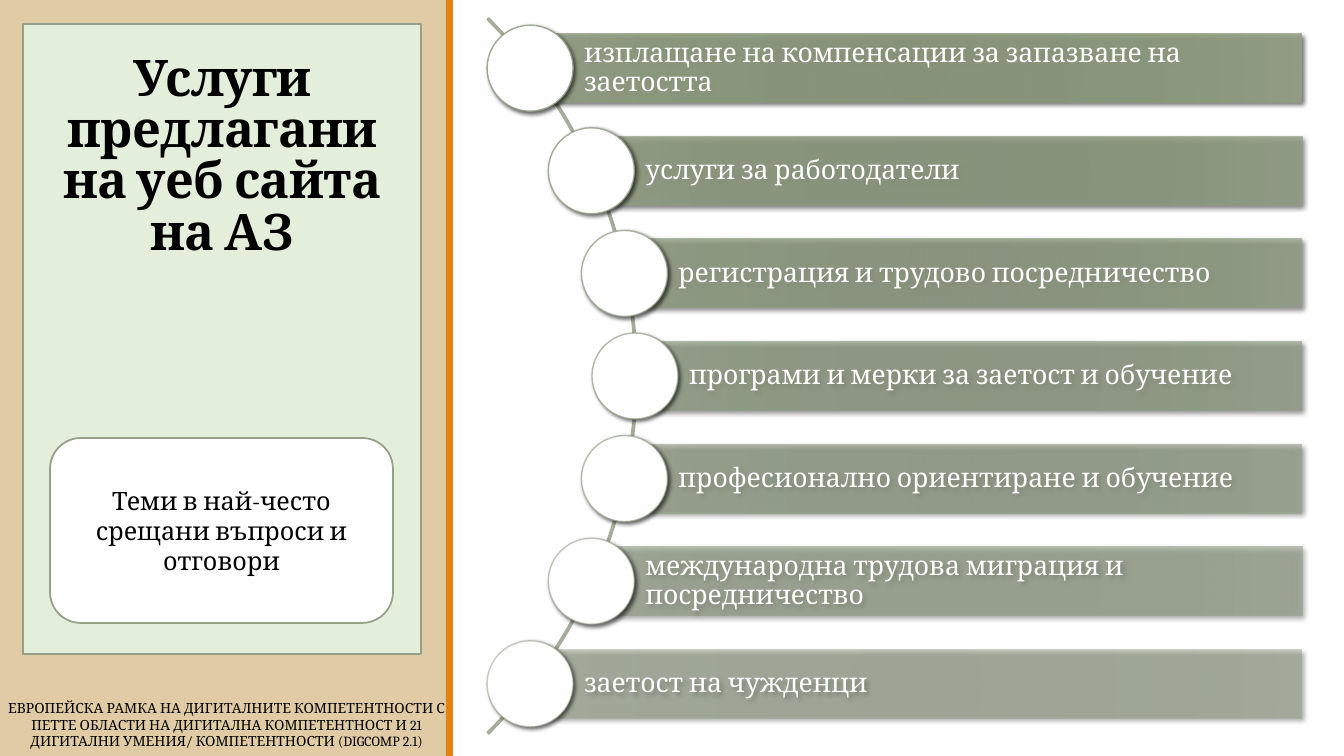
from math import sqrt
from lxml import etree
from pptx import Presentation
from pptx.dml.color import RGBColor
from pptx.enum.shapes import MSO_SHAPE
from pptx.enum.text import MSO_ANCHOR, PP_ALIGN
from pptx.oxml.ns import nsdecls, qn
from pptx.util import Emu, Pt

RECT, ROUNDED = MSO_SHAPE.RECTANGLE, MSO_SHAPE.ROUNDED_RECTANGLE
OVAL, ARC = MSO_SHAPE.OVAL, MSO_SHAPE.BLOCK_ARC
TOP, MIDDLE = MSO_ANCHOR.TOP, MSO_ANCHOR.MIDDLE
LEFT, CENTER = PP_ALIGN.LEFT, PP_ALIGN.CENTER

# Content
TITLE = "Услуги предлагани на уеб сайта на АЗ"
TOPIC = "Теми в най-често срещани въпроси и отговори"
FOOTER = ("ЕВРОПЕЙСКА РАМКА НА ДИГИТАЛНИТЕ КОМПЕТЕНТНОСТИ С ПЕТТЕ ОБЛАСТИ "
          "НА ДИГИТАЛНА КОМПЕТЕНТНОСТ И 21 ДИГИТАЛНИ УМЕНИЯ/ КОМПЕТЕНТНОСТИ "
          "(DIGCOMP 2.1)")
SERVICES = [
    "изплащане на компенсации за запазване на заетостта",
    "услуги за работодатели",
    "регистрация и трудово посредничество",
    "програми и мерки за заетост и обучение",
    "професионално ориентиране и обучение",
    "международна трудова миграция и посредничество",
    "заетост на чужденци",
]

# Style
FONT = "Cambria"
BLACK, WHITE, SAGE = "000000", "FFFFFF", "94A088"
BAR_STOPS = [(0, "8A987B"), (34, "8B997D"), (70, "8D9C7E"), (100, "94A187")]
FIRST_OPACITY, LAST_OPACITY = 90, 50

# Layout in px
SLIDE_WIDTH, SLIDE_HEIGHT = 1344, 756
EMU_PER_PX = 12192000 / SLIDE_WIDTH
CENTER_X, CENTER_Y, CURVE_RADIUS, ARC_RADIUS = 131, 376, 504, 506
ROW_STEP, BAR_HEIGHT, BAR_RIGHT, DOT_SIZE = 102.6, 69, 1302, 86


def px(length):
    return Emu(round(length * EMU_PER_PX))


def color(value):
    return RGBColor.from_string(value)


def add_box(kind, left, top, width, height, fill=None, line=None, weight=1):
    box = page.shapes.add_shape(kind, px(left), px(top), px(width), px(height))
    box.shadow.inherit = False
    if fill:
        box.fill.solid()
        box.fill.fore_color.rgb = color(fill)
    else:
        box.fill.background()
    if line:
        box.line.color.rgb = color(line)
        box.line.width = Pt(weight)
    else:
        box.line.fill.background()
    return box


def write(box, text, size, ink=BLACK, align=CENTER, anchor=MIDDLE,
          margins=(10, 5, 10, 5), spacing=None, bold=False):
    frame = box.text_frame
    frame.word_wrap = True
    frame.vertical_anchor = anchor
    (frame.margin_left, frame.margin_top,
     frame.margin_right, frame.margin_bottom) = map(px, margins)
    frame.text = text
    para = frame.paragraphs[0]
    para.alignment = align
    if spacing:
        para.line_spacing = spacing
    span = para.runs[0]
    span.font.name = FONT
    span.font.size = Pt(size)
    span.font.bold = bold
    span.font.color.rgb = color(ink)
    return span


def add_shadow(box, blur):
    effects = box._element.spPr.find(qn("a:effectLst"))
    effects.append(etree.fromstring(
        f'<a:outerShdw {nsdecls("a")} blurRad="{Pt(blur)}" dist="{Pt(2)}" '
        f'dir="2700000" algn="tl" rotWithShape="0"><a:srgbClr val="{BLACK}">'
        '<a:alpha val="60000"/></a:srgbClr></a:outerShdw>'))


def set_gradient(box, opacity):
    stops = "".join(
        f'<a:gs pos="{position * 1000}"><a:srgbClr val="{value}">'
        f'<a:alpha val="{opacity * 1000}"/></a:srgbClr></a:gs>'
        for position, value in BAR_STOPS)
    gradient = etree.fromstring(
        f'<a:gradFill {nsdecls("a")} rotWithShape="1"><a:gsLst>{stops}</a:gsLst>'
        '<a:path path="circle"><a:fillToRect l="100000" t="100000" r="100000" '
        'b="100000"/></a:path></a:gradFill>')
    properties = box._element.spPr
    properties.replace(properties.find(qn("a:noFill")), gradient)


def set_line_opacity(box, opacity):
    ink = box._element.spPr.find(qn("a:ln")).find(".//" + qn("a:srgbClr"))
    etree.SubElement(ink, qn("a:alpha")).set("val", str(opacity * 1000))


deck = Presentation()
deck.slide_width, deck.slide_height = px(SLIDE_WIDTH), px(SLIDE_HEIGHT)
page = deck.slides.add_slide(deck.slide_layouts[6])

# Side panel and title
add_box(RECT, 0, 0, 446, SLIDE_HEIGHT, "E0CBA4")
add_box(RECT, 446, 0, 7, SLIDE_HEIGHT, "E48312")
title = add_box(RECT, 23, 24, 398, 630, "E3EFDB", SAGE)
title_span = write(title, TITLE, 36, anchor=TOP, margins=(10, 31, 10, 5),
                   spacing=0.85, bold=True)
title_span.font._element.set("spc", "-50")

# Curve behind the circles
curve = add_box(ARC, CENTER_X - ARC_RADIUS, CENTER_Y - ARC_RADIUS,
                2 * ARC_RADIUS, 2 * ARC_RADIUS, line="A3AD9A", weight=1.25)
for index, value in enumerate((189, 27, 0.002)):
    curve.adjustments[index] = value

# Service bars, each starting at a circle on the curve
last = len(SERVICES) - 1
for index, service in enumerate(SERVICES):
    offset = (index - last / 2) * ROW_STEP
    x = CENTER_X + sqrt(CURVE_RADIUS ** 2 - offset ** 2)
    y = CENTER_Y + offset
    opacity = round(FIRST_OPACITY + (LAST_OPACITY - FIRST_OPACITY) * index / last)
    bar = add_box(RECT, x, y - BAR_HEIGHT / 2, BAR_RIGHT - x, BAR_HEIGHT)
    set_gradient(bar, opacity)
    add_shadow(bar, 3.5)
    write(bar, service, 19, WHITE, LEFT, margins=(54, 5, 5, 5), spacing=0.9)
    dot = add_box(OVAL, x - DOT_SIZE / 2, y - DOT_SIZE / 2, DOT_SIZE, DOT_SIZE,
                  WHITE, SAGE)
    set_line_opacity(dot, opacity)
    add_shadow(dot, 3)

# Footer and topic card
footer = page.shapes.add_textbox(px(0), px(696), px(453), px(57))
write(footer, FOOTER, 10, margins=(4, 4, 4, 4))
topic = add_box(ROUNDED, 50, 438, 343, 185, WHITE, SAGE, 1.25)
write(topic, TOPIC, 18)

deck.save("out.pptx")
